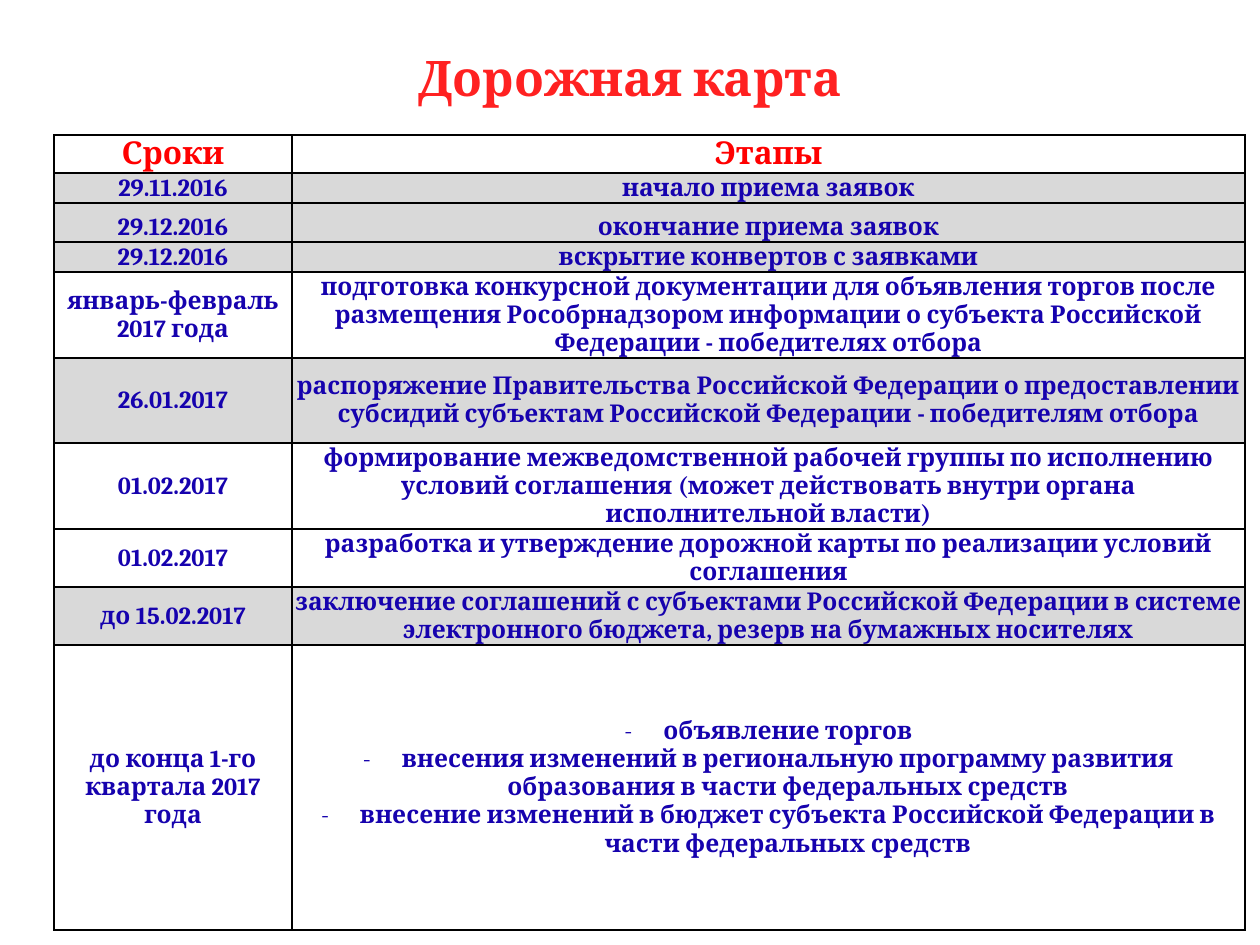
from dataclasses import dataclass

from lxml.etree import SubElement
from pptx import Presentation
from pptx.dml.color import RGBColor
from pptx.enum.text import MSO_ANCHOR, PP_ALIGN
from pptx.oxml.ns import qn
from pptx.util import Emu, Pt

PX_PER_INCH = 126


def px(length):
    return Emu(round(length * 914400 / PX_PER_INCH))


@dataclass(frozen=True)
class Theme:
    font: str = "Cambria"
    title_color: str = "FF2121"
    header_color: str = "FF0000"
    body_color: str = "1602AE"
    shade: str = "D9D9D9"
    border: str = "000000"
    title_size: int = 28
    header_size: int = 18
    body_size: int = 14
    border_width: int = 1


class RoadmapSlide:
    def __init__(self, presentation, theme):
        self.theme = theme
        self.slide = presentation.slides.add_slide(presentation.slide_layouts[5])

    def format_text(self, paragraph, size, color):
        paragraph.alignment = PP_ALIGN.CENTER
        for run in paragraph.runs:
            run.font.name = self.theme.font
            run.font.size = Pt(size)
            run.font.bold = True
            run.font.color.rgb = RGBColor.from_string(color)

    def title(self, text, left, top, width, height):
        heading = self.slide.shapes.title
        heading.left, heading.top = px(left), px(top)
        heading.width, heading.height = px(width), px(height)
        frame = heading.text_frame
        frame.text = text
        frame.vertical_anchor = MSO_ANCHOR.MIDDLE
        self.format_text(frame.paragraphs[0], self.theme.title_size, self.theme.title_color)

    def add_borders(self, cell):
        properties = cell._tc.get_or_add_tcPr()
        for position, side in enumerate(("lnL", "lnR", "lnT", "lnB")):
            line = SubElement(properties, qn(f"a:{side}"), w=str(Pt(self.theme.border_width)))
            fill = SubElement(line, qn("a:solidFill"))
            SubElement(fill, qn("a:srgbClr"), val=self.theme.border)
            properties.insert(position, line)

    def add_dash(self, paragraph, indent):
        properties = paragraph._p.get_or_add_pPr()
        properties.set("marL", str(px(indent)))
        properties.set("indent", str(-px(indent)))
        SubElement(properties, qn("a:buFont"), typeface=self.theme.font)
        SubElement(properties, qn("a:buChar"), char="-")

    def fill_cell(self, cell, lines, size, color, anchor, shaded):
        cell.margin_left = cell.margin_right = cell.margin_top = px(1)
        cell.margin_bottom = 0
        cell.vertical_anchor = anchor
        if shaded:
            cell.fill.solid()
            cell.fill.fore_color.rgb = RGBColor.from_string(self.theme.shade)
        else:
            cell.fill.background()
        self.add_borders(cell)
        cell.text_frame.text = "\n".join(lines)
        for paragraph in cell.text_frame.paragraphs:
            if len(lines) > 1:
                self.add_dash(paragraph, indent=39)
            self.format_text(paragraph, size, color)

    def table(self, header, stages, left, top, widths, header_height):
        heights = [header_height] + [stage[0] for stage in stages]
        frame = self.slide.shapes.add_table(
            len(heights), len(widths), px(left), px(top), px(sum(widths)), px(sum(heights)))
        grid = frame.table
        for column, width in zip(grid.columns, widths):
            column.width = px(width)
        for row, height in zip(grid.rows, heights):
            row.height = px(height)

        # Header row
        for cell, label in zip(grid.rows[0].cells, header):
            self.fill_cell(cell, [label], self.theme.header_size, self.theme.header_color,
                           MSO_ANCHOR.BOTTOM, False)

        # Stage rows: short ones sit on the bottom line, tall ones are centred
        for index, (height, shaded, date, *steps) in enumerate(stages, start=1):
            anchor = MSO_ANCHOR.BOTTOM if height < 50 else MSO_ANCHOR.MIDDLE
            for cell, lines in zip(grid.rows[index].cells, ([date], steps)):
                self.fill_cell(cell, lines, self.theme.body_size, self.theme.body_color,
                               anchor, shaded)


# Row height, shaded or not, date, one or more steps
STAGES = [
    (30, True, "29.11.2016", "начало приема заявок"),
    (39, True, "29.12.2016", "окончание приема заявок"),
    (30, True, "29.12.2016", "вскрытие конвертов с заявками"),
    (86, False, "январь-февраль 2017 года",
     "подготовка конкурсной документации для объявления торгов после размещения "
     "Рособрнадзором информации о субъекта Российской Федерации - победителях отбора"),
    (85, True, "26.01.2017",
     "распоряжение Правительства Российской Федерации о предоставлении субсидий "
     "субъектам Российской Федерации - победителям отбора"),
    (86, False, "01.02.2017",
     "формирование межведомственной рабочей группы по исполнению условий соглашения "
     "(может действовать внутри органа исполнительной власти)"),
    (58, False, "01.02.2017",
     "разработка и утверждение дорожной карты по реализации условий соглашения"),
    (58, True, "до 15.02.2017",
     "заключение соглашений с субъектами Российской Федерации в системе "
     "электронного бюджета, резерв на бумажных носителях"),
    (285, False, "до конца 1-го квартала 2017 года",
     "объявление торгов",
     "внесения изменений в региональную программу развития образования "
     "в части федеральных средств",
     "внесение изменений в бюджет субъекта Российской Федерации "
     "в части федеральных средств"),
]


def main():
    presentation = Presentation()
    presentation.slide_width, presentation.slide_height = px(1260), px(945)
    roadmap = RoadmapSlide(presentation, Theme())

    # Title
    roadmap.title("Дорожная карта", left=63, top=38, width=1134, height=77)

    # Schedule
    roadmap.table(("Сроки", "Этапы"), STAGES, left=54, top=135,
                  widths=(238, 953), header_height=38)

    presentation.save("out.pptx")


if __name__ == "__main__":
    main()
